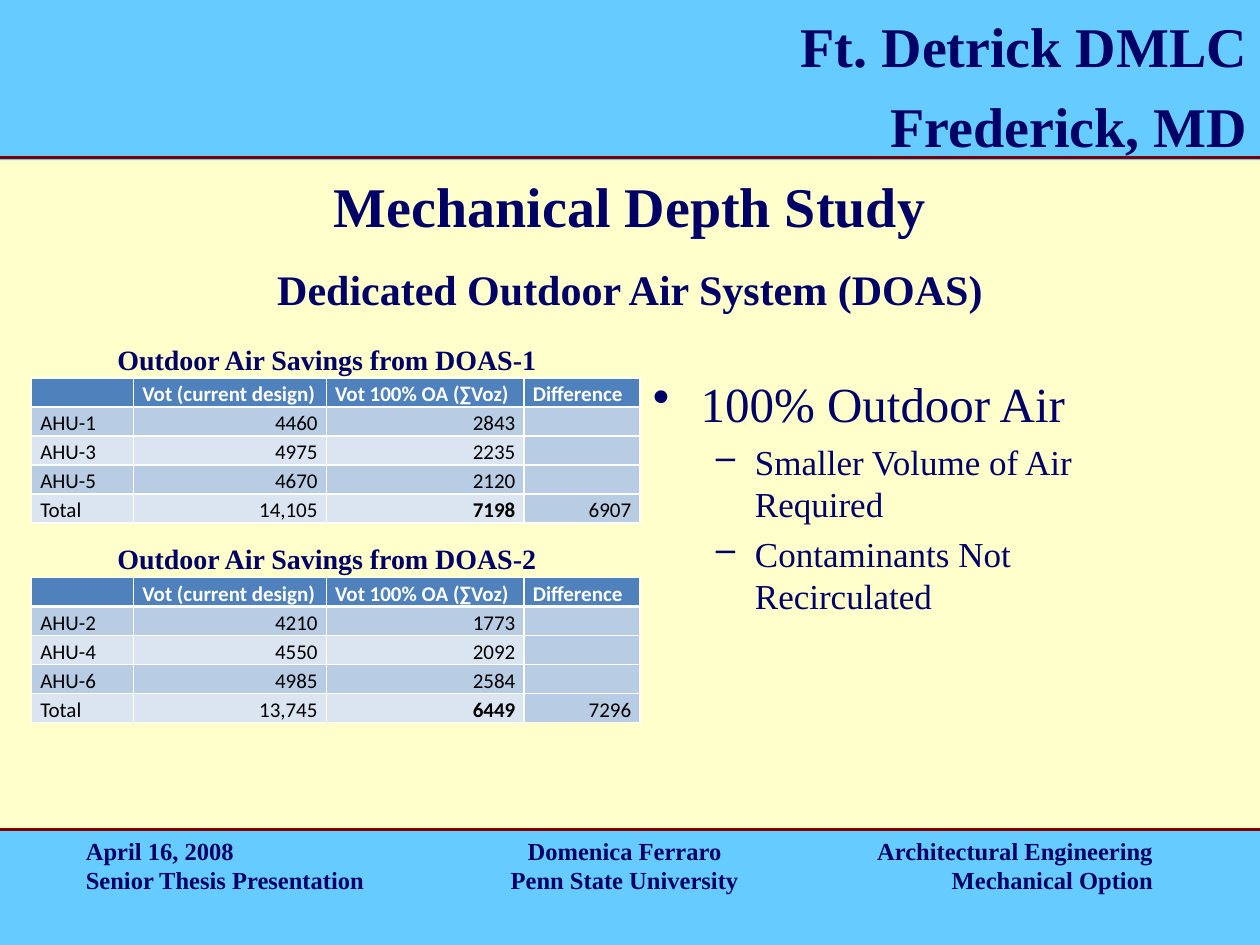
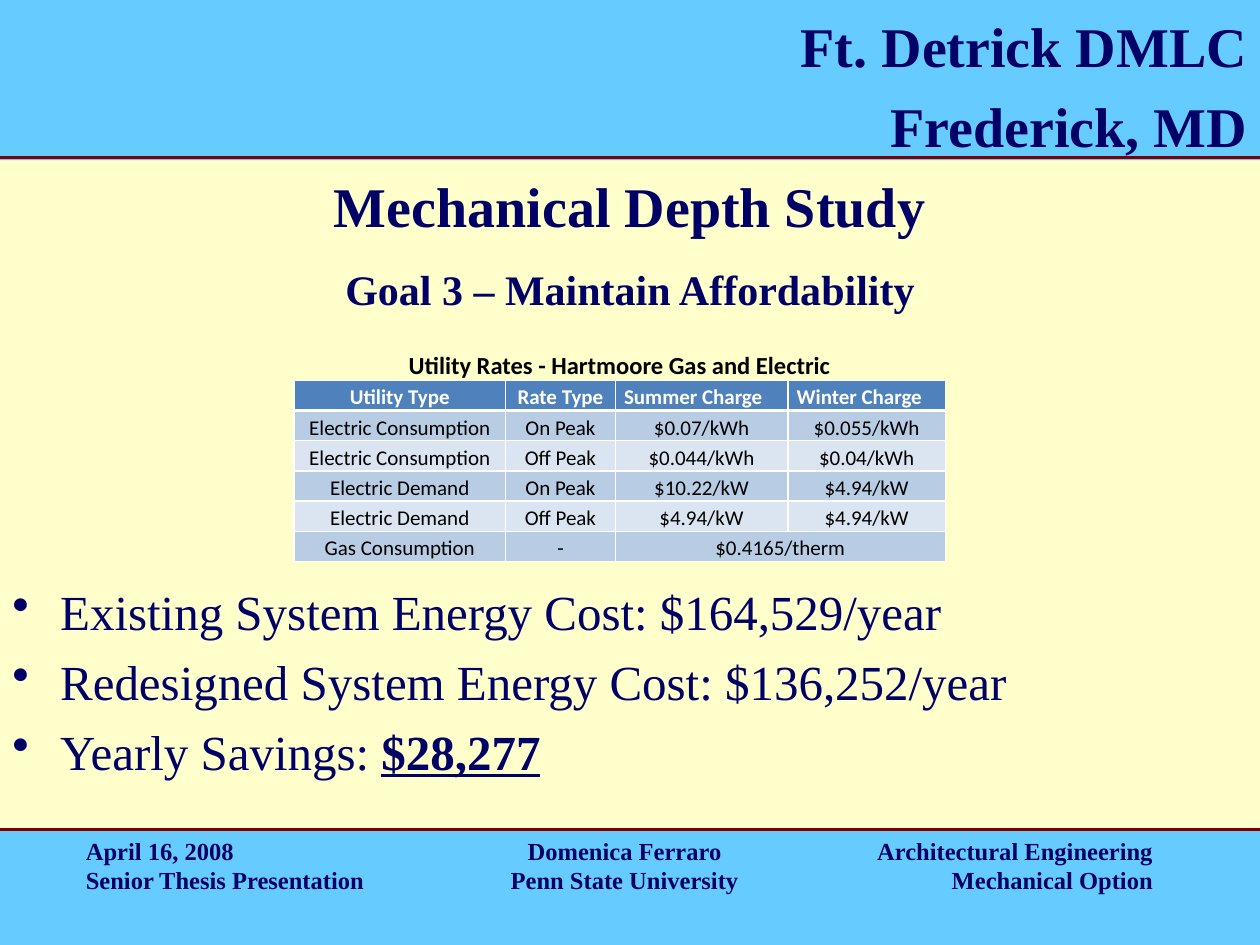
from lxml import etree
from pptx import Presentation
from pptx import util as u
from pptx.dml.color import RGBColor
from pptx.enum import shapes, text
from pptx.oxml import ns

COLUMNS, ROWS = 120, 90  # grid of 1/12 inch squares
BAND, PAPER, RULE, NAVY = "66CCFF", "FFFFCC", "800000", "000066"
HEADER, DARK_BAND, LIGHT_BAND = "4F81BD", "B8CCE4", "DBE5F1"
WHITE, BLACK = "FFFFFF", "000000"
SERIF, SANS = "Times New Roman", "Calibri"
LEFT, CENTER, RIGHT = text.PP_ALIGN.LEFT, text.PP_ALIGN.CENTER, text.PP_ALIGN.RIGHT
TOP, MIDDLE, BOTTOM = text.MSO_ANCHOR.TOP, text.MSO_ANCHOR.MIDDLE, text.MSO_ANCHOR.BOTTOM

HEADING = {"name": SERIF, "size": u.Pt(32), "bold": True}
SUBHEADING = HEADING | {"size": u.Pt(24)}
CAPTION = HEADING | {"size": u.Pt(16)}
FOOTER = HEADING | {"size": u.Pt(14)}
# Bullet mark, indent and hang in inches, text size in points
LEVELS = [("•", 0.38, 0.38, 28), ("–", 0.81, 0.31, 20)]
SPACE_SHARE = 0.23  # space before a paragraph, as a share of its text size

FOOTERS = [
    (7, LEFT, ["April 16, 2008", "Senior Thesis Presentation"]),
    (44, CENTER, ["Domenica Ferraro", "Penn State University"]),
    (80, RIGHT, ["Architectural Engineering", "Mechanical Option"]),
]
SAVINGS_HEADER = ["", "Vot (current design)", "Vot 100% OA (∑Voz)", "Difference"]
SAVINGS = [
    ("Outdoor Air Savings from DOAS-1", 32, [
        ["AHU-1", "4460", "2843", ""],
        ["AHU-3", "4975", "2235", ""],
        ["AHU-5", "4670", "2120", ""],
        ["Total", "14,105", "7198", "6907"],
    ]),
    ("Outdoor Air Savings from DOAS-2", 51, [
        ["AHU-2", "4210", "1773", ""],
        ["AHU-4", "4550", "2092", ""],
        ["AHU-6", "4985", "2584", ""],
        ["Total", "13,745", "6449", "7296"],
    ]),
]
RATES = [
    ["Utility Rates - Hartmoore Gas and Electric", "", "", ""],
    ["Utility Type", "Rate Type", "Summer Charge", "Winter Charge"],
    ["Electric Consumption", "On Peak", "$0.07/kWh", "$0.055/kWh"],
    ["Electric Consumption", "Off Peak", "$0.044/kWh", "$0.04/kWh"],
    ["Electric Demand", "On Peak", "$10.22/kW", "$4.94/kW"],
    ["Electric Demand", "Off Peak", "$4.94/kW", "$4.94/kW"],
    ["Gas Consumption", "-", "$0.4165/therm", ""],
]


def grid(*cells):
    return [u.Inches(cell / 12) for cell in cells]


def color(value):
    return RGBColor.from_string(value)


def apply(target, formats):
    for name, value in formats.items():
        setattr(target, name, value)


def write(para, words, formats, ink=NAVY):
    span = para.add_run()
    span.text = words
    apply(span.font, formats)
    span.font.color.rgb = color(ink)


def write_lines(frame, lines, formats, align, space=0):
    for index, line in enumerate(lines):
        para = frame.add_paragraph() if index else frame.paragraphs[0]
        para.alignment = align
        if index and space:
            para.space_before = u.Pt(space)
        write(para, line, formats)


def add_box(page, place, anchor=TOP):
    frame = page.shapes.add_textbox(*grid(*place)).text_frame
    apply(frame, {"word_wrap": True, "vertical_anchor": anchor})
    return frame


def add_label(page, place, lines, formats, align, anchor=TOP):
    write_lines(add_box(page, place, anchor), lines, formats, align)


def add_band(page, top, height):
    band = page.shapes.add_shape(shapes.MSO_SHAPE.RECTANGLE, *grid(0, top, COLUMNS, height))
    band.shadow.inherit = False
    band.fill.solid()
    band.fill.fore_color.rgb = color(BAND)
    band.line.fill.background()
    return band


def add_rule(page, row):
    rule = page.shapes.add_connector(shapes.MSO_CONNECTOR.STRAIGHT, *grid(COLUMNS, row, 0, row))
    rule.line.color.rgb = color(RULE)
    rule.line.width = u.Pt(2)
    etree.SubElement(rule._element.spPr, ns.qn("a:effectLst"))


def add_bullets(page, place, items):
    """Each item is a level, its words and, if any, words to stress at its end."""
    frame = add_box(page, place)
    for index, (level, words, stressed) in enumerate(items):
        mark, indent, hang, size = LEVELS[level]
        para = frame.add_paragraph() if index else frame.paragraphs[0]
        para.level = level
        if index:
            para.space_before = u.Pt(size * SPACE_SHARE)
        properties = para._p.get_or_add_pPr()
        properties.set("marL", str(u.Inches(indent)))
        properties.set("indent", str(-u.Inches(hang)))
        etree.SubElement(properties, ns.qn("a:buChar"), char=mark)
        formats = {"name": SERIF, "size": u.Pt(size)}
        write(para, words, formats)
        if stressed:
            write(para, stressed, formats | {"bold": True, "underline": True})


def set_borders(cell, widths):
    """Widths in points go by side; zero hides the line."""
    properties = cell._tc.get_or_add_tcPr()
    for side, width in widths.items():
        line = etree.SubElement(properties, ns.qn(f"a:ln{side}"), w=str(u.Pt(width)))
        if width:
            fill = etree.SubElement(line, ns.qn("a:solidFill"))
            etree.SubElement(fill, ns.qn("a:srgbClr"), val=WHITE)
        else:
            etree.SubElement(line, ns.qn("a:noFill"))


def fill_cell(cell, words, align, fill, borders, ink=BLACK, bold=False, size=12):
    apply(cell, {"margin_left": u.Inches(0.07), "margin_right": u.Inches(0.07),
                 "margin_top": 0, "margin_bottom": 0, "vertical_anchor": BOTTOM})
    set_borders(cell, borders)
    if fill:
        cell.fill.solid()
        cell.fill.fore_color.rgb = color(fill)
    else:
        cell.fill.background()
    para = cell.text_frame.paragraphs[0]
    apply(para, {"alignment": align, "line_spacing": 1.15})
    if words:
        write(para, words, {"name": SANS, "size": u.Pt(size), "bold": bold}, ink)
    else:
        etree.SubElement(para._p, ns.qn("a:endParaRPr"), sz=str(size * 100))


def add_grid_table(page, place, widths, row_height, rows):
    left, top = grid(*place)
    height = u.Inches(row_height)
    table = page.shapes.add_table(len(rows), len(widths), left, top,
                                  u.Inches(sum(widths)), height * len(rows)).table
    apply(table, {"first_row": False, "horz_banding": False})
    for column, width in zip(table.columns, widths):
        column.width = u.Inches(width)
    for row in table.rows:
        row.height = height
    return table


def fill_rows(table, rows, header_row, header_aligns, aligns, fill_for, bold_for):
    """Fill the header row and the body below it."""
    for r, row in enumerate(rows[header_row:]):
        borders = {"L": 1, "R": 1, "T": 1.5 if r == 1 else 1, "B": 1 if r else 1.5}
        for c, words in enumerate(row):
            cell = table.cell(header_row + r, c)
            if r:
                fill_cell(cell, words, aligns[c], fill_for(r, c), borders, bold=bold_for(r, c))
            else:
                fill_cell(cell, words, header_aligns[c], HEADER, borders, WHITE, True)


def banded(row):
    return DARK_BAND if row % 2 else LIGHT_BAND


def add_savings_table(page, caption, top, body):
    rows = [SAVINGS_HEADER, *body]
    table = add_grid_table(page, (3, top + 4), [0.81, 1.53, 1.57, 0.92], 0.21, rows)
    fill_rows(table, rows, 0, [LEFT] * 4, [LEFT] + [RIGHT] * 3,
              lambda r, c: DARK_BAND if c == 3 else banded(r),
              lambda r, c: (r, c) == (len(body), 2))
    add_label(page, (10, top, 46, 4.4), [caption], CAPTION, LEFT)


def add_rates_table(page):
    table = add_grid_table(page, (28, 33), [1.68, 0.87, 1.37, 1.25], 0.24, RATES)
    last = len(RATES) - 1
    table.cell(0, 0).merge(table.cell(0, 3))
    table.cell(last, 2).merge(table.cell(last, 3))
    for c, words in enumerate(RATES[0]):
        fill_cell(table.cell(0, c), words, CENTER, None, dict.fromkeys("LRTB", 0),
                  bold=True, size=14)
    fill_rows(table, RATES, 1, [CENTER, CENTER, LEFT, LEFT], [CENTER] * 4,
              lambda r, c: banded(r), lambda r, c: False)


def add_page(deck, subtitle):
    """Add a page with the bands, rules, footers and both title lines."""
    page = deck.slides.add_slide(deck.slide_layouts[6])
    page.background.fill.solid()
    page.background.fill.fore_color.rgb = color(PAPER)
    add_band(page, 79, ROWS - 79)
    frame = add_band(page, 0, 15.25).text_frame
    apply(frame, {"vertical_anchor": TOP, "margin_top": u.Inches(0.09), "word_wrap": True})
    write_lines(frame, ["Ft. Detrick DMLC", "Frederick, MD"], HEADING, RIGHT, 32 * SPACE_SHARE)
    for row in (15, 79):
        add_rule(page, row)
    for left, align, lines in FOOTERS:
        add_label(page, (left, 79, 31, 6), lines, FOOTER, align)
    add_label(page, (0, 16, COLUMNS, 7), ["Mechanical Depth Study"], HEADING, CENTER, MIDDLE)
    add_label(page, (0, 24, COLUMNS, 7), [subtitle], SUBHEADING, CENTER, MIDDLE)
    return page


def add_outdoor_air_page(deck):
    page = add_page(deck, "Dedicated Outdoor Air System (DOAS)")
    add_bullets(page, (61, 35, 54, 41), [
        (0, "100% Outdoor Air", ""),
        (1, "Smaller Volume of Air Required", ""),
        (1, "Contaminants Not Recirculated", ""),
    ])
    for caption, top, body in SAVINGS:
        add_savings_table(page, caption, top, body)


def add_affordability_page(deck):
    page = add_page(deck, "Goal 3 – Maintain Affordability")
    add_bullets(page, (0, 54.75, COLUMNS, 21), [
        (0, "Existing System Energy Cost: $164,529/year", ""),
        (0, "Redesigned System Energy Cost: $136,252/year", ""),
        (0, "Yearly Savings: ", "$28,277"),
    ])
    add_rates_table(page)


def main():
    deck = Presentation()
    deck.slide_width, deck.slide_height = grid(COLUMNS, ROWS)
    add_outdoor_air_page(deck)
    add_affordability_page(deck)
    deck.save("out.pptx")


if __name__ == "__main__":
    main()
